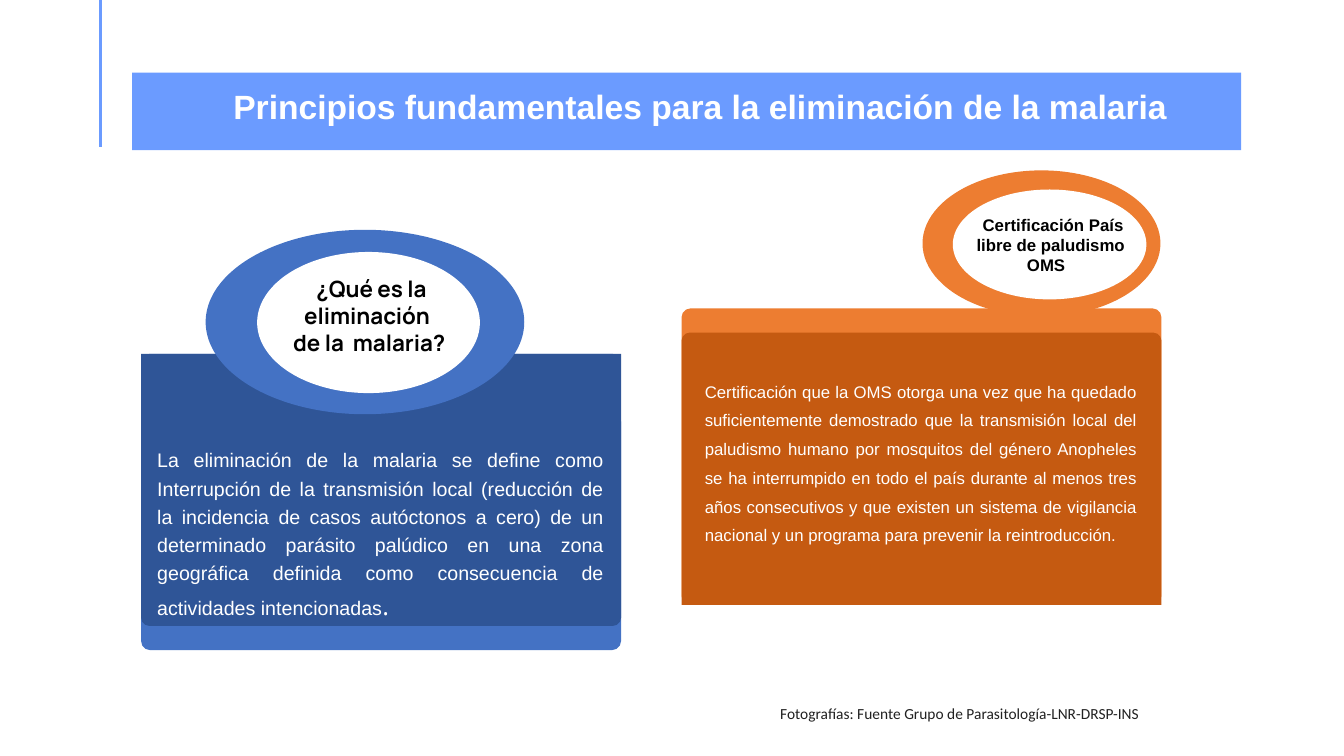
from dataclasses import dataclass

import pptx
import pptx.dml.color
import pptx.enum.shapes
import pptx.enum.text
import pptx.oxml
import pptx.slide
import pptx.util

Inches = pptx.util.Inches
Shape = pptx.enum.shapes.MSO_SHAPE
Align = pptx.enum.text.PP_ALIGN
Anchor = pptx.enum.text.MSO_ANCHOR


@dataclass(frozen=True)
class Theme:
    banner: str = "6B9BFF"
    blue: str = "4472C4"
    dark_blue: str = "2F5597"
    orange: str = "ED7D31"
    dark_orange: str = "C55A11"
    white: str = "FFFFFF"
    black: str = "000000"
    credit: str = "212121"
    title_size: int = 24
    stop_size: int = 18
    question_size: int = 16
    body_size: int = 14
    small_size: int = 12
    credit_size: int = 11


THEME = Theme()


@dataclass(frozen=True)
class Box:
    left: float
    top: float
    width: float
    height: float


@dataclass(frozen=True)
class Block:
    kind: Shape
    box: Box
    color: str
    corners: tuple[float, ...] = ()


@dataclass(frozen=True)
class Label:
    box: Box
    paragraphs: tuple[tuple[str, ...], ...]
    size: int
    color: str
    font: str = "Arial"
    bold: bool = False
    align: Align = Align.LEFT
    anchor: Anchor = Anchor.TOP
    spacing: float | pptx.util.Length = 1.0
    inset: tuple[float, float] = (0.1, 0.05)


BLOCKS = (
    Block(Shape.RECTANGLE, Box(1.31, 0.72, 11, 0.77), THEME.banner),
    Block(Shape.OVAL, Box(9.15, 1.69, 2.36, 1.45), THEME.orange),
    Block(Shape.OVAL, Box(9.45, 1.88, 1.92, 1.09), THEME.white),
    Block(Shape.ROUNDED_RECTANGLE, Box(1.4, 3.51, 4.76, 2.94), THEME.blue, (0.03,)),
    Block(Shape.ROUND_2_SAME_RECTANGLE, Box(1.4, 3.51, 4.76, 2.7), THEME.dark_blue, (0, 0.03)),
    Block(Shape.ROUNDED_RECTANGLE, Box(6.76, 3.06, 4.76, 2.94), THEME.orange, (0.03,)),
    Block(Shape.ROUND_2_SAME_RECTANGLE, Box(6.76, 3.3, 4.76, 2.7), THEME.dark_orange, (0.03, 0)),
    Block(Shape.OVAL, Box(2.04, 2.28, 3.16, 1.83), THEME.blue),
    Block(Shape.OVAL, Box(2.55, 2.5, 2.21, 1.4), THEME.white),
)

TITLE = Label(
    Box(1.32, 0.69, 11.25, 0.77),
    (("Principios fundamentales para la eliminación de la malaria",),),
    THEME.title_size, THEME.white, bold=True,
    align=Align.CENTER, anchor=Anchor.MIDDLE, spacing=0.9,
)
QUESTION = Label(
    Box(2.58, 2.71, 2.21, 0.84),
    (("¿Qué es la eliminación  ",), ("de la  malaria? ",)),
    THEME.question_size, THEME.black, font="Manrope", bold=True,
    align=Align.CENTER, anchor=Anchor.MIDDLE,
)
CERTIFICATION = Label(
    Box(9.52, 2.08, 1.85, 0.91),
    (("Certificación País libre de paludismo ",), ("OMS   ",)),
    THEME.small_size, THEME.black, bold=True, align=Align.CENTER,
)
DEFINITION = Label(
    Box(1.51, 4.37, 4.53, 1.79),
    ((
        "La eliminación de la malaria se define como Interrupción de la transmisión "
        "local (reducción de la incidencia de casos autóctonos a cero) de un determinado "
        "parásito palúdico en una zona geográfica definida como consecuencia de "
        "actividades intencionadas",
        ".",
    ),),
    THEME.body_size, THEME.white, align=Align.JUSTIFY, spacing=1.2, inset=(0.05, 0.03),
)
REQUIREMENTS = Label(
    Box(6.94, 3.67, 4.39, 1.78),
    ((
        "Certificación que la OMS otorga una vez que ha quedado suficientemente "
        "demostrado que la transmisión local del paludismo humano por mosquitos del "
        "género Anopheles se ha interrumpido en todo el país durante al menos tres años "
        "consecutivos y que existen un sistema de vigilancia nacional y un programa "
        "para prevenir la reintroducción. ",
    ),),
    THEME.small_size, THEME.white, align=Align.JUSTIFY,
    spacing=pptx.util.Pt(20.5), inset=(0.05, 0.03),
)
CREDIT = Label(
    Box(7.64, 6.94, 4.03, 0.29),
    (("Fotografías: Fuente Grupo de Parasitología-LNR-DRSP-INS",),),
    THEME.credit_size, THEME.credit, font="Calibri",
)


def rgb(color: str) -> pptx.dml.color.RGBColor:
    return pptx.dml.color.RGBColor.from_string(color)


def place(box: Box) -> tuple[pptx.util.Length, ...]:
    return tuple(Inches(v) for v in (box.left, box.top, box.width, box.height))


def draw_block(s: pptx.slide.Slide, block: Block) -> None:
    sp = s.shapes.add_shape(block.kind, *place(block.box))
    sp.shadow.inherit = False
    sp.fill.solid()
    sp.fill.fore_color.rgb = rgb(block.color)
    sp.line.fill.background()
    for i, corner in enumerate(block.corners):
        sp.adjustments[i] = corner


def draw_accent(s: pptx.slide.Slide) -> None:
    line = s.shapes.add_connector(
        pptx.enum.shapes.MSO_CONNECTOR.STRAIGHT, Inches(1), Inches(0), Inches(1), Inches(1.46)
    )
    line.line.color.rgb = rgb(THEME.banner)
    line.line.width = pptx.util.Pt(2.25)
    sp_pr = line._element.spPr
    sp_pr.append(pptx.oxml.xmlchemy.OxmlElement("a:effectLst"))


def draw_label(s: pptx.slide.Slide, label: Label) -> pptx.text.text.TextFrame:
    tf = s.shapes.add_textbox(*place(label.box)).text_frame
    tf.word_wrap = True
    tf.vertical_anchor = label.anchor
    tf.margin_left = tf.margin_right = Inches(label.inset[0])
    tf.margin_top = tf.margin_bottom = Inches(label.inset[1])
    for i, texts in enumerate(label.paragraphs):
        p = tf.add_paragraph() if i else tf.paragraphs[0]
        p.alignment = label.align
        p.line_spacing = label.spacing
        for text in texts:
            r = p.add_run()
            r.text = text
            r.font.name = label.font
            r.font.size = pptx.util.Pt(label.size)
            r.font.bold = label.bold
            r.font.color.rgb = rgb(label.color)
    return tf


def main() -> None:
    prs = pptx.Presentation()
    prs.slide_width, prs.slide_height = Inches(13.33), Inches(7.5)
    s = prs.slides.add_slide(prs.slide_layouts[6])
    for block in BLOCKS:
        draw_block(s, block)
    draw_accent(s)
    for label in (TITLE, QUESTION, CERTIFICATION, REQUIREMENTS, CREDIT):
        draw_label(s, label)
    stop = draw_label(s, DEFINITION).paragraphs[0].runs[-1]
    stop.font.name = "Open Sans"
    stop.font.size = pptx.util.Pt(THEME.stop_size)
    prs.save("out.pptx")


if __name__ == "__main__":
    main()
